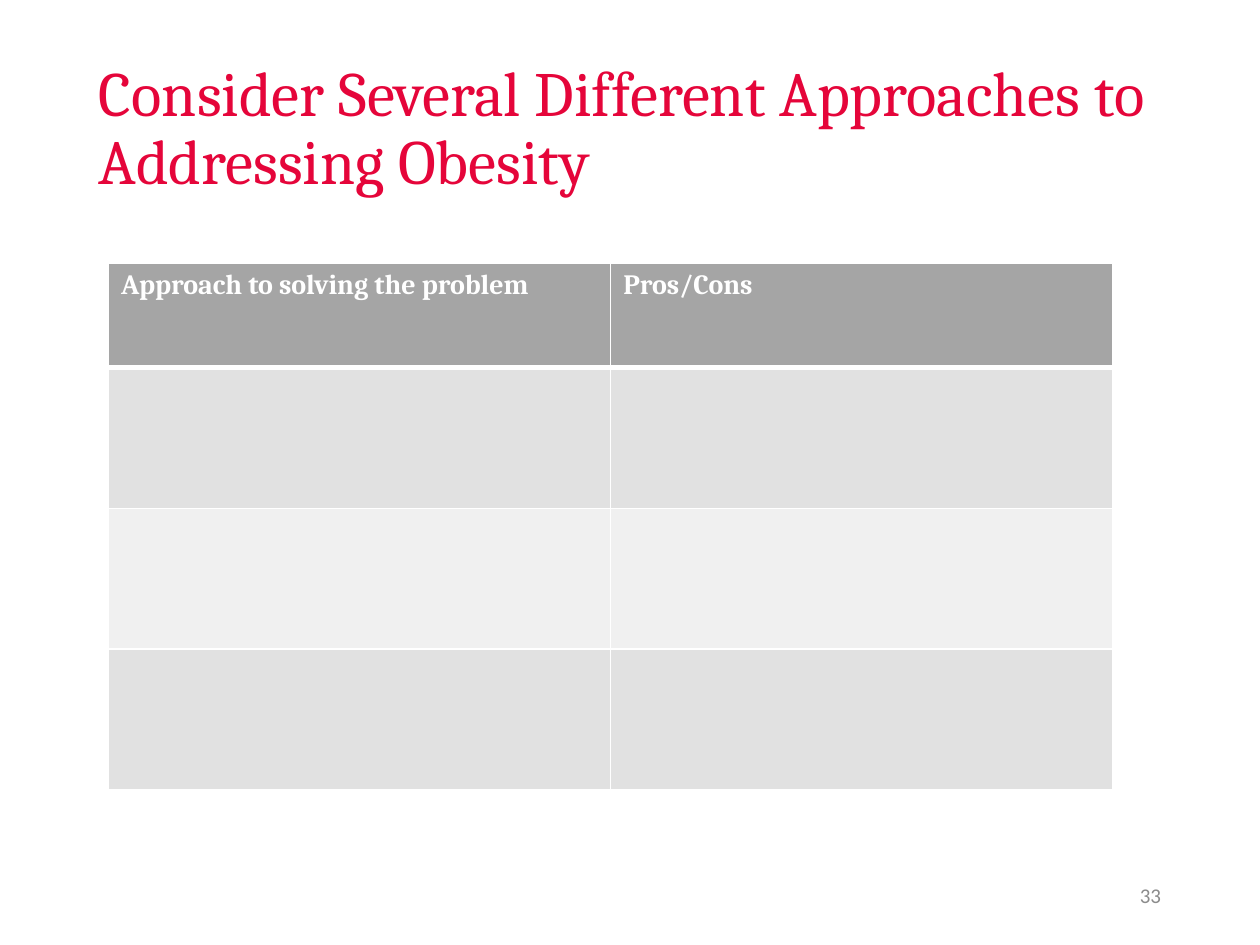
from dataclasses import dataclass

from lxml.etree import SubElement as Sub
from pptx import Presentation as Deck
from pptx.dml.color import RGBColor as RGB
from pptx.enum.text import MSO_ANCHOR as Anchor, PP_ALIGN as Align
from pptx.oxml.ns import qn
from pptx.util import Pt


@dataclass(frozen=True)
class Theme:
    """Colours, fonts and type sizes."""
    red: str = "E5053A"
    white: str = "FFFFFF"
    gray: str = "8C8C8C"
    head: str = "A5A5A5"
    bands: tuple = ("E1E1E1", "F0F0F0")
    serif: str = "Cambria"
    sans: str = "Calibri"
    title: int = 36
    label: int = 16
    small: int = 12


LOOK = Theme()


def put(item, form):
    """Set each attribute of item from a dict."""
    for name, value in form.items():
        setattr(item, name, value)


def style(para, face, size, color, bold=False):
    """Format the font of a paragraph's runs."""
    for run in para.runs:
        put(run.font, {"name": face, "size": Pt(size), "bold": bold})
        run.font.color.rgb = RGB.from_string(color)


def add_text(slide, text, box, form, font):
    """Add a wrapped, middle-anchored text box."""
    frame = slide.shapes.add_textbox(*map(Pt, box)).text_frame
    put(frame, {"word_wrap": True, "vertical_anchor": Anchor.MIDDLE, "text": text})
    para = frame.paragraphs[0]
    put(para, form)
    style(para, *font)


def add_edges(cell, base):
    """Draw white borders, with the given base width in points."""
    props = cell._tc.get_or_add_tcPr()
    for side, width in {"L": 1, "R": 1, "T": 1, "B": base}.items():
        line = Sub(props, qn(f"a:ln{side}"), w=str(Pt(width)))
        Sub(Sub(line, qn("a:solidFill")), qn("a:srgbClr"), val=LOOK.white)


def add_grid(slide, heads, box, rows):
    """Add a table with a header row and blank banded rows."""
    grid = slide.shapes.add_table(len(rows), len(heads), *map(Pt, box)).table
    for row, high in zip(grid.rows, rows):
        row.height = Pt(high)
    for r, row in enumerate(grid.rows):
        for cell in row.cells:
            add_edges(cell, 1 if r else 3)
            cell.fill.solid()
            tint = LOOK.bands[(r - 1) % 2] if r else LOOK.head
            cell.fill.fore_color.rgb = RGB.from_string(tint)
    for cell, text in zip(grid.rows[0].cells, heads):
        cell.text = text
        style(cell.text_frame.paragraphs[0], LOOK.serif, LOOK.label, LOOK.white, True)


def main():
    """Build and save the slide."""
    deck = Deck()
    put(deck, {"slide_width": Pt(720), "slide_height": Pt(540)})
    slide = deck.slides.add_slide(deck.slide_layouts[6])
    add_text(slide, "Consider Several Different Approaches to Addressing Obesity",
             (49.5, 44.5, 621, 60), {"line_spacing": 0.9},
             (LOOK.serif, LOOK.title, LOOK.red))
    add_text(slide, "33", (508.5, 497, 162, 28.75), {"alignment": Align.RIGHT},
             (LOOK.sans, LOOK.small, LOOK.gray))
    add_grid(slide, ("Approach to solving the problem", "Pros/Cons"),
             (62, 150.5, 574, 301), (59.5, 80.5, 80.5, 80.5))
    deck.save("out.pptx")


if __name__ == "__main__":
    main()
